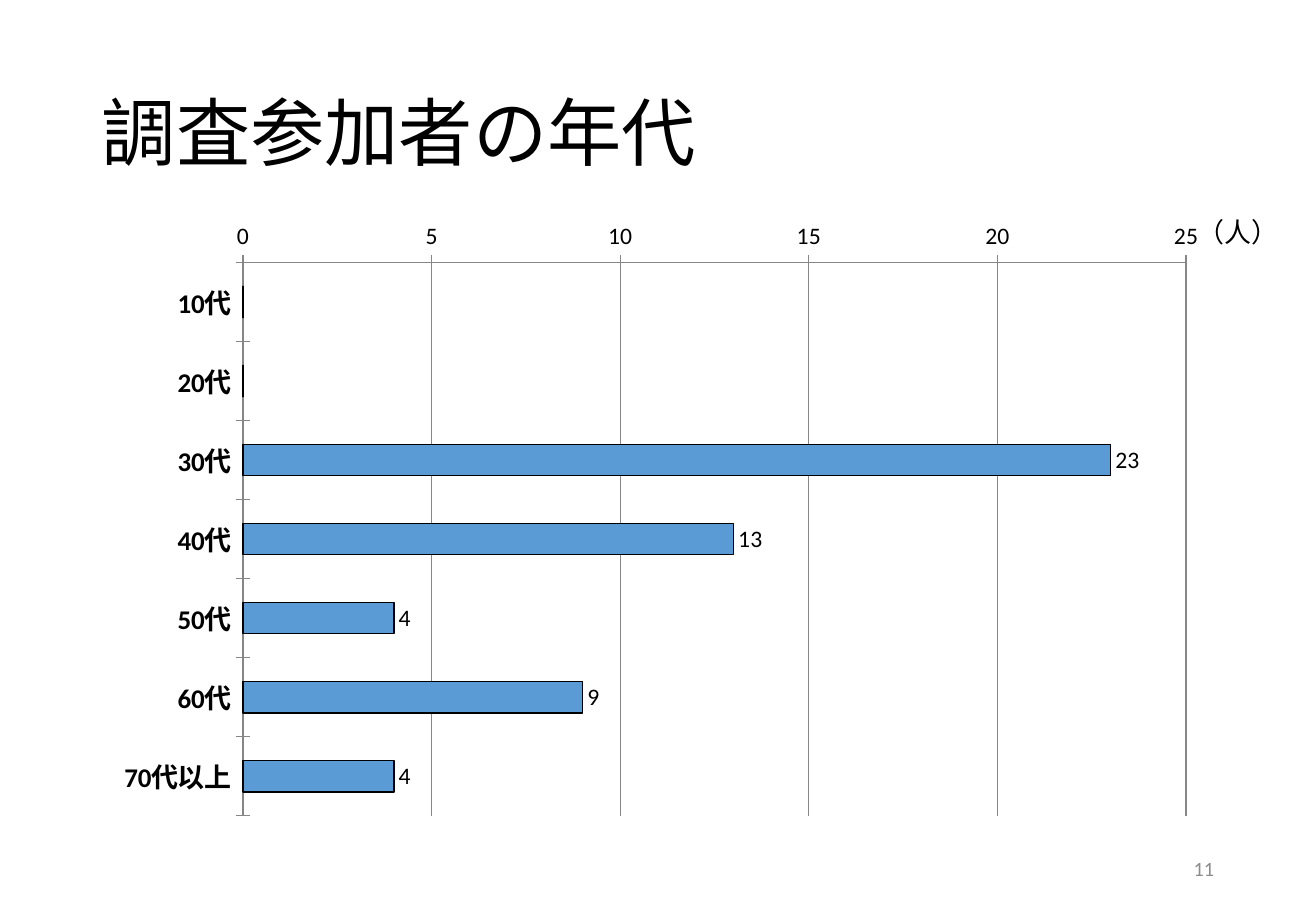
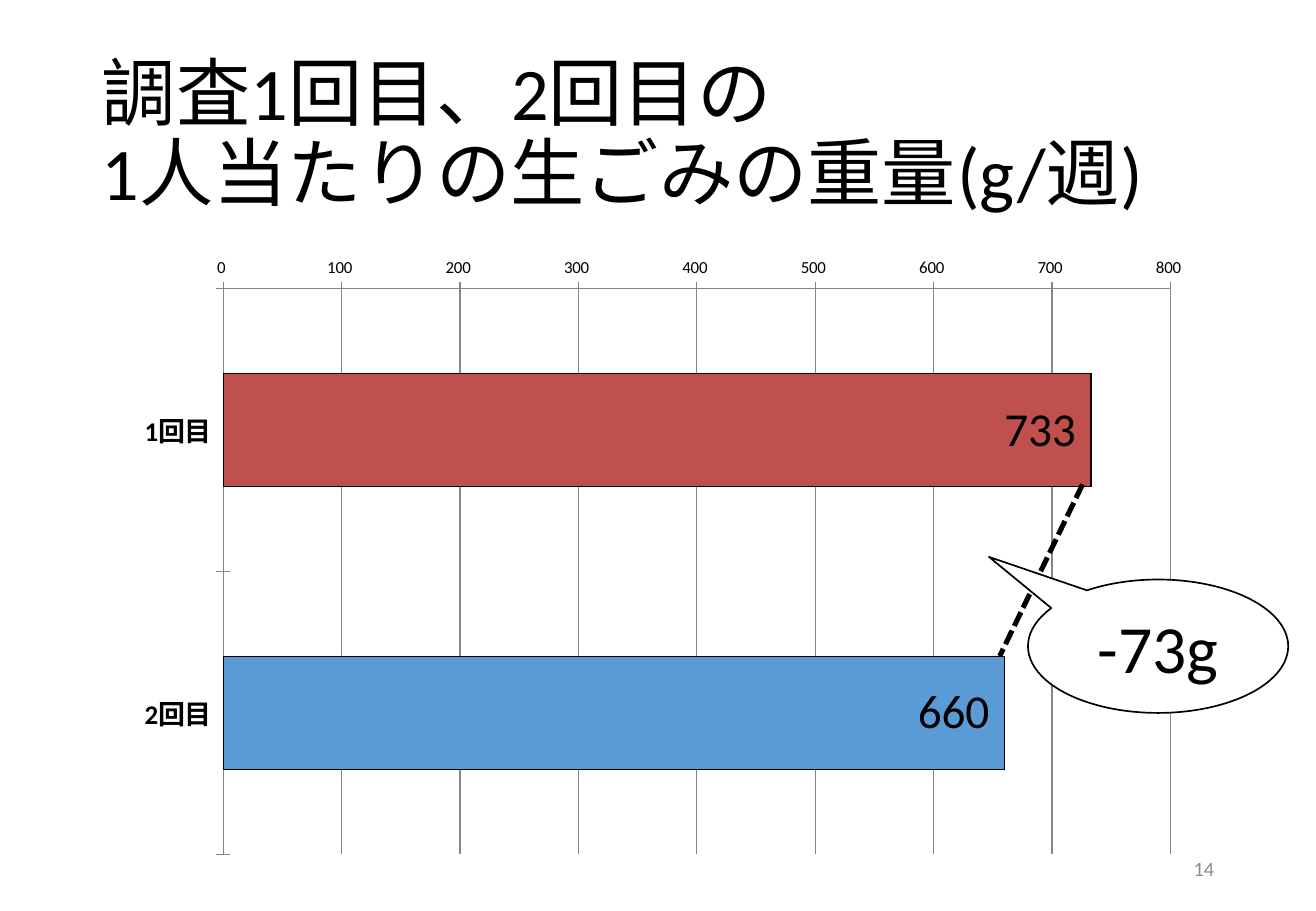
from dataclasses import dataclass
from typing import Optional

from lxml import etree
from pptx import Presentation
from pptx.chart.data import CategoryChartData
from pptx.dml.color import RGBColor
from pptx.enum.chart import XL_CHART_TYPE, XL_LABEL_POSITION, XL_TICK_MARK
from pptx.enum.dml import MSO_LINE
from pptx.enum.shapes import MSO_CONNECTOR, MSO_SHAPE
from pptx.enum.text import MSO_ANCHOR, PP_ALIGN
from pptx.oxml.ns import qn
from pptx.util import Cm, Pt

BAR = XL_CHART_TYPE.BAR_CLUSTERED
OUTSIDE, INSIDE = XL_LABEL_POSITION.OUTSIDE_END, XL_LABEL_POSITION.INSIDE_END
CROSS = XL_TICK_MARK.CROSS
DASH = MSO_LINE.SQUARE_DOT
STRAIGHT = MSO_CONNECTOR.STRAIGHT
CALLOUT = MSO_SHAPE.OVAL_CALLOUT
TOP, MIDDLE = MSO_ANCHOR.TOP, MSO_ANCHOR.MIDDLE
LEFT, CENTER, RIGHT = PP_ALIGN.LEFT, PP_ALIGN.CENTER, PP_ALIGN.RIGHT


@dataclass(frozen=True)
class Theme:
    font: str = "Calibri"
    ink: RGBColor = RGBColor(0, 0, 0)
    paper: RGBColor = RGBColor(255, 255, 255)
    muted: RGBColor = RGBColor(0x8C, 0x8C, 0x8C)
    grid: RGBColor = RGBColor(0x86, 0x86, 0x86)
    blue: RGBColor = RGBColor(0x5B, 0x9B, 0xD5)
    red: RGBColor = RGBColor(0xC0, 0x50, 0x4D)
    title: int = 44
    callout: int = 40
    category: int = 16
    footer: int = 12
    chart: int = 10


THEME = Theme()


@dataclass(frozen=True)
class Frame:
    """Left, top, width and height in centimetres."""
    left: float
    top: float
    width: float
    height: float

    def lengths(self) -> tuple:
        return Cm(self.left), Cm(self.top), Cm(self.width), Cm(self.height)


@dataclass(frozen=True)
class BarPanel:
    frame: Frame
    plot: Frame  # shares of the chart's width and height
    values: dict
    maximum: int
    step: int
    axis_size: int
    label_size: int
    label_position: object
    label_format: str
    axis_format: str = "General"
    highlight: Optional[int] = None


TITLE = Frame(1.88, 1.02, 23.72, 3.68)
PAGE_NUMBER = Frame(19.43, 17.65, 6.2, 1.02)

AGES = BarPanel(
    Frame(2.03, 4.32, 23.47, 13), Frame(0.13, 0.09, 0.84, 0.89),
    {"10代": 0, "20代": 0, "30代": 23, "40代": 13, "50代": 4, "60代": 9, "70代以上": 4},
    maximum=25, step=5, axis_size=14, label_size=14,
    label_position=OUTSIDE, label_format="0;;;",
)
WEIGHTS = BarPanel(
    Frame(2.39, 5.13, 22.76, 13), Frame(0.1, 0.07, 0.87, 0.91),
    {"1回目": 733, "2回目": 660},
    maximum=800, step=100, axis_size=THEME.chart, label_size=28,
    label_position=INSIDE, label_format="0_ ", axis_format="0_ ", highlight=0,
)


def write(shape, text: str, size: int, align=LEFT, anchor=TOP,
          color: RGBColor = THEME.ink, spacing: float = 1.0) -> None:
    shape.text_frame.word_wrap = True
    shape.text_frame.vertical_anchor = anchor
    para = shape.text_frame.paragraphs[0]
    para.text = text
    para.alignment = align
    para.line_spacing = spacing
    para.font.name = THEME.font
    para.font.size = Pt(size)
    para.font.color.rgb = color


def add_text(page, frame: Frame, text: str, size: int, **style) -> None:
    write(page.shapes.add_textbox(*frame.lengths()), text, size, **style)


def add_page(deck, title: str, number: int):
    page = deck.slides.add_slide(deck.slide_layouts[6])
    add_text(page, TITLE, title, THEME.title, anchor=MIDDLE, spacing=0.9)
    add_text(page, PAGE_NUMBER, str(number), THEME.footer,
             align=RIGHT, anchor=MIDDLE, color=THEME.muted)
    return page


def paint_bar(bar, color: RGBColor) -> None:
    bar.format.fill.solid()
    bar.format.fill.fore_color.rgb = color
    bar.format.line.color.rgb = THEME.ink
    bar.format.line.width = Pt(0.75)


def place_plot(chart, plot: Frame) -> None:
    """Fix the inner plot area, which python-pptx cannot position."""
    area = chart._chartSpace.find(".//" + qn("c:plotArea"))
    for old in area.findall(qn("c:layout")):
        area.remove(old)
    layout = etree.Element(qn("c:layout"))
    manual = etree.SubElement(layout, qn("c:manualLayout"))
    settings = {"layoutTarget": "inner", "xMode": "edge", "yMode": "edge",
                "x": plot.left, "y": plot.top, "w": plot.width, "h": plot.height}
    for name, value in settings.items():
        etree.SubElement(manual, qn(f"c:{name}")).set("val", str(value))
    area.insert(0, layout)


def add_bars(page, panel: BarPanel) -> None:
    data = CategoryChartData()
    data.categories = list(panel.values)
    data.add_series("Series 1", list(panel.values.values()))
    chart = page.shapes.add_chart(BAR, *panel.frame.lengths(), data).chart
    chart.has_legend = False
    chart.has_title = False
    chart.font.name = THEME.font
    chart.font.size = Pt(THEME.chart)
    chart.font.color.rgb = THEME.ink
    place_plot(chart, panel.plot)

    # Axes
    categories, scale = chart.category_axis, chart.value_axis
    for axis in (categories, scale):
        axis.major_tick_mark = CROSS
        axis.format.line.color.rgb = THEME.grid
    categories.reverse_order = True
    categories.tick_labels.font.size = Pt(THEME.category)
    categories.tick_labels.font.bold = True
    scale.minimum_scale = 0
    scale.maximum_scale = panel.maximum
    scale.major_unit = panel.step
    scale.has_major_gridlines = True
    scale.major_gridlines.format.line.color.rgb = THEME.grid
    scale.tick_labels.font.size = Pt(panel.axis_size)
    scale.tick_labels.number_format = panel.axis_format
    scale.tick_labels.number_format_is_linked = False

    # Bars and their values
    plot = chart.plots[0]
    plot.vary_by_categories = False
    plot.gap_width = 150
    series = plot.series[0]
    paint_bar(series, THEME.blue)
    if panel.highlight is not None:
        paint_bar(series.points[panel.highlight], THEME.red)
    labels = series.data_labels
    labels.show_value = True
    labels.position = panel.label_position
    labels.number_format = panel.label_format
    labels.number_format_is_linked = False
    labels.font.size = Pt(panel.label_size)


def add_difference(page, text: str) -> None:
    # Dashed line between the ends of the two bars
    drop = page.shapes.add_connector(STRAIGHT, Cm(22.63), Cm(10.13), Cm(20.9), Cm(13.72))
    drop.line.color.rgb = THEME.ink
    drop.line.width = Pt(3)
    drop.line.dash_style = DASH
    etree.SubElement(drop._element.spPr, qn("a:effectLst"))

    # Callout
    bubble = page.shapes.add_shape(CALLOUT, *Frame(21.49, 12.12, 5.44, 2.79).lengths())
    bubble.shadow.inherit = False
    bubble.adjustments[0], bubble.adjustments[1] = -0.65, -0.67
    bubble.fill.solid()
    bubble.fill.fore_color.rgb = THEME.paper
    bubble.line.color.rgb = THEME.ink
    bubble.line.width = Pt(1)
    frame = bubble.text_frame
    frame.margin_left = frame.margin_right = frame.margin_top = frame.margin_bottom = 0
    write(bubble, text, THEME.callout, align=CENTER, anchor=MIDDLE)


def main() -> None:
    deck = Presentation()
    deck.slide_width, deck.slide_height = Cm(27.51), Cm(19.05)

    # Ages of the participants
    page = add_page(deck, "調査参加者の年代", 11)
    add_bars(page, AGES)
    add_text(page, Frame(24.59, 4.39, 2.59, 0.94), "（人）", THEME.category, align=CENTER)

    # Food waste per person
    page = add_page(deck, "調査1回目、2回目の\n1人当たりの生ごみの重量(g/週)", 14)
    add_bars(page, WEIGHTS)
    add_difference(page, "-73g")

    deck.save("out.pptx")


if __name__ == "__main__":
    main()
